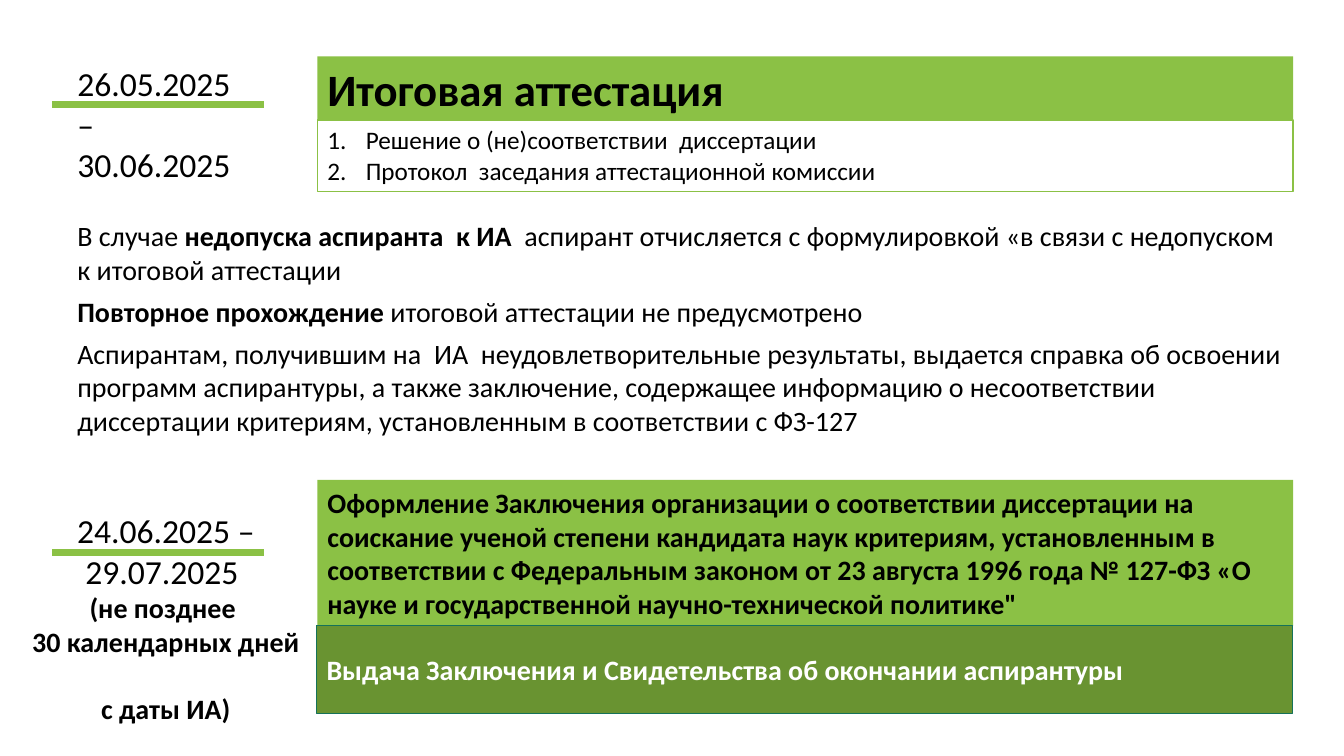
"""Build the slide on final attestation dates and documents."""
from dataclasses import dataclass

from lxml.etree import SubElement
from pptx import Presentation
from pptx.dml.color import RGBColor
from pptx.enum.shapes import MSO_CONNECTOR as Link, MSO_SHAPE as Form
from pptx.enum.text import MSO_ANCHOR as Anchor, MSO_AUTO_SIZE as Fit, PP_ALIGN as Align
from pptx.oxml.ns import qn
from pptx.shapes.shapetree import SlideShapes
from pptx.text.text import _Paragraph as Par
from pptx.util import Cm, Pt

GREEN = "8BC145"
LEFT, WIDE = 8, 24.59


@dataclass
class Para:
    text: str
    size: float = 20
    bold: bool = False
    align: Align = Align.LEFT
    space: float = 0
    listed: bool = False


@dataclass
class Box:
    left: float
    top: float
    width: float
    height: float
    paras: list[Para]
    fill: str = ""
    line: str = ""
    ink: str = "000000"
    anchor: Anchor = Anchor.TOP
    grow: bool = True


def color(code: str) -> RGBColor:
    """Turn a hex string into a colour."""
    return RGBColor.from_string(code)


def write(par: Par, item: Para, ink: str) -> None:
    """Fill a paragraph; text between asterisks is bold."""
    par.alignment = item.align
    par.space_before = Pt(item.space)
    if item.listed:
        props = par._p.get_or_add_pPr()
        props.set("marL", str(Cm(0.97)))
        props.set("indent", str(-Cm(0.97)))
        SubElement(props, qn("a:buAutoNum"), type="arabicPeriod")
    font = par.font
    font.name, font.size, font.bold = "Calibri", Pt(item.size), item.bold
    font.color.rgb = color(ink)
    parts = item.text.split("*")
    if len(parts) == 1:
        par.text = item.text
        return
    for num, part in enumerate(parts):
        if part:
            run = par.add_run()
            run.text = part
            run.font.bold = num % 2 == 1


def draw(shapes: SlideShapes, box: Box) -> None:
    """Draw a text box or a filled rectangle."""
    area = [Cm(size) for size in (box.left, box.top, box.width, box.height)]
    if box.fill:
        shape = shapes.add_shape(Form.RECTANGLE, *area)
        shape.shadow.inherit = False
        shape.fill.solid()
        shape.fill.fore_color.rgb = color(box.fill)
        if box.line:
            shape.line.color.rgb = color(box.line)
            shape.line.width = Pt(1)
        else:
            shape.line.fill.background()
    else:
        shape = shapes.add_textbox(*area)
    frame = shape.text_frame
    frame.word_wrap = True
    frame.vertical_anchor = box.anchor
    frame.auto_size = Fit.SHAPE_TO_FIT_TEXT if box.grow else Fit.NONE
    for num, item in enumerate(box.paras):
        write(frame.add_paragraph() if num else frame.paragraphs[0], item, box.ink)


def rule(shapes: SlideShapes, top: float) -> None:
    """Draw a thick green line under a date."""
    link = shapes.add_connector(Link.STRAIGHT, Cm(1.32), Cm(top), Cm(6.65), Cm(top))
    link.line.color.rgb = color(GREEN)
    link.line.width = Pt(5.25)
    SubElement(link._element.spPr, qn("a:effectLst"))


BOXES = [
    Box(1.7, 1.47, 4.95, 2.31, [Para("26.05.2025 – 30.06.2025", 24)]),
    Box(1.7, 5.38, 30.89, 5.82, [
        Para("В случае *недопуска аспиранта  к ИА*  аспирант отчисляется с формулировкой "
             "«в связи с недопуском к итоговой аттестации", space=6),
        Para("*Повторное прохождение* итоговой аттестации не предусмотрено", space=6),
        Para("Аспирантам, получившим на  ИА  неудовлетворительные результаты, выдается справка "
             "об освоении программ аспирантуры, а также заключение, содержащее информацию "
             "о несоответствии диссертации критериям, установленным в соответствии с ФЗ-127",
             space=6),
    ]),
    Box(0.51, 12.73, 7.34, 4.88, [
        Para("24.06.2025 –29.07.2025 ", 24, align=Align.CENTER),
        Para("(не позднее \n30 календарных дней \nс даты ИА)", bold=True, align=Align.CENTER),
    ]),
    Box(LEFT, 1.42, WIDE, 1.63, [Para("Итоговая аттестация ", 32, True, Align.JUSTIFY)],
        GREEN, anchor=Anchor.MIDDLE),
    Box(LEFT, 3.02, WIDE, 1.8, [
        Para("Решение о (не)соответствии  диссертации", 18, align=Align.JUSTIFY, listed=True),
        Para("Протокол  заседания аттестационной комиссии ", 18, align=Align.JUSTIFY, listed=True),
    ], "FFFFFF", GREEN),
    Box(LEFT, 12.09, WIDE, 3.68, [
        Para("Оформление Заключения организации о соответствии диссертации на соискание ученой "
             "степени кандидата наук критериям, установленным в соответствии с Федеральным "
             "законом от 23 августа 1996 года № 127-ФЗ «О науке и государственной "
             "научно-технической политике\"", bold=True),
    ], GREEN, anchor=Anchor.MIDDLE),
    Box(7.98, 15.77, WIDE, 2.21,
        [Para("Выдача Заключения и Свидетельства об окончании аспирантуры", bold=True)],
        "699331", "157259", "FFFFFF", Anchor.MIDDLE, False),
]


def main() -> None:
    """Build and save the slide."""
    deck = Presentation()
    deck.slide_width, deck.slide_height = Cm(33.87), Cm(19.05)
    shapes = deck.slides.add_slide(deck.slide_layouts[6]).shapes
    for box in BOXES:
        draw(shapes, box)
    for top in (2.64, 13.92):
        rule(shapes, top)
    deck.save("out.pptx")


if __name__ == "__main__":
    main()
